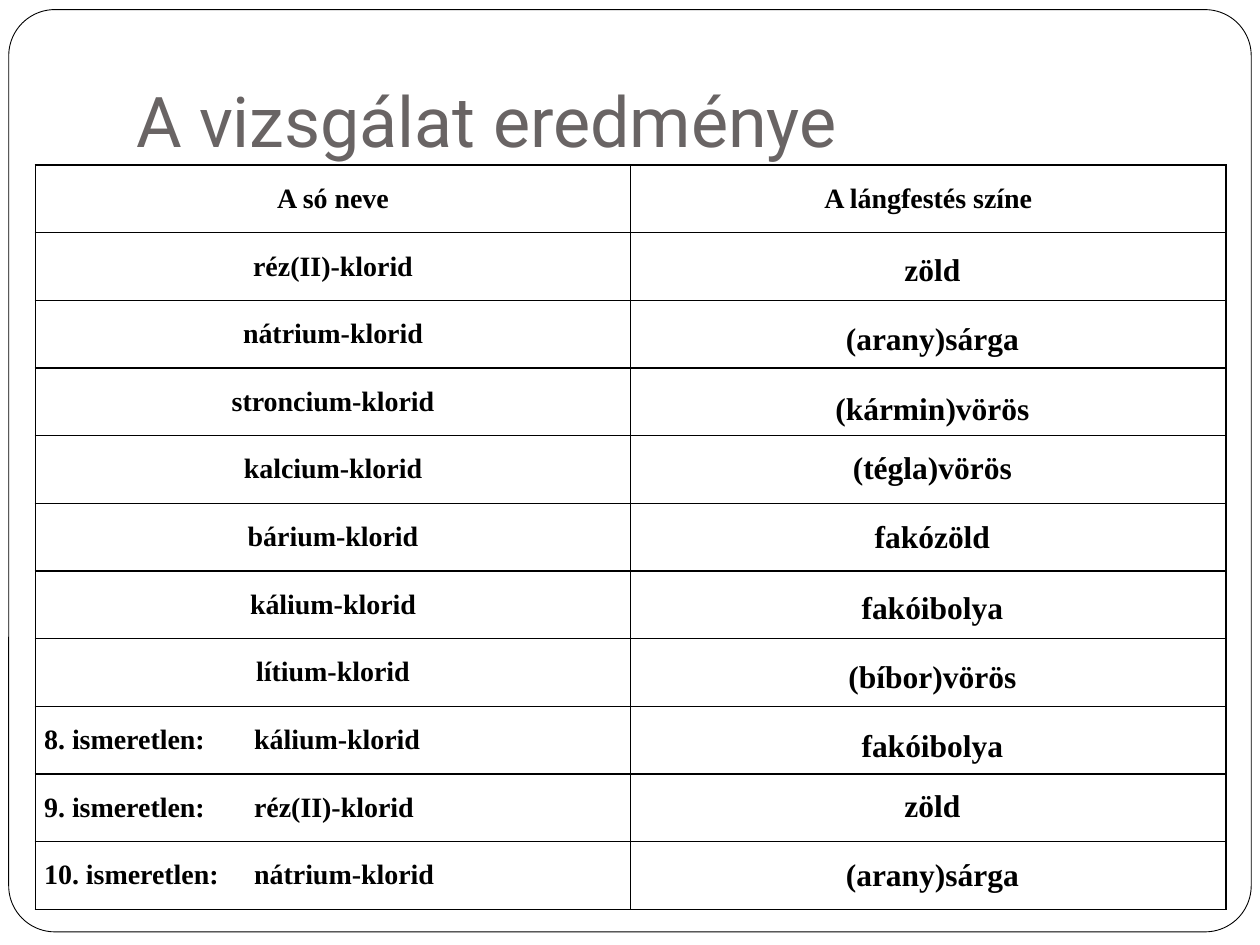
import dataclasses
import typing

import lxml.etree
import pptx
import pptx.dml.color
import pptx.enum.shapes
import pptx.enum.text
import pptx.oxml.ns
import pptx.util

Pt = pptx.util.Pt
Rgb = pptx.dml.color.RGBColor
Align = pptx.enum.text.PP_ALIGN
Anchor = pptx.enum.text.MSO_ANCHOR
Form = pptx.enum.shapes.MSO_SHAPE
qn = pptx.oxml.ns.qn


@dataclasses.dataclass(frozen=True)
class Theme:
    ink: str = "000000"
    paper: str = "FFFFFF"
    grey: str = "696464"
    head: str = "Roboto"
    body: str = "Times New Roman"
    title: float = 40
    cell: float = 16
    label: float = 18


@dataclasses.dataclass(frozen=True)
class Label:
    text: str
    top: float
    width: float


THEME = Theme()
MID = 532.8  # shared centre of the colour labels
TAB = 120  # where the names of the unknown salts start
SHORT, LONG, HIGH = 118.8, 130.3, 28.1

HEADS = ["A só neve", "A lángfestés színe"]
SALTS = [
    "réz(II)-klorid", "nátrium-klorid", "stroncium-klorid", "kalcium-klorid",
    "bárium-klorid", "kálium-klorid", "lítium-klorid",
]
GUESS = [
    "8. ismeretlen:\tkálium-klorid",
    "9. ismeretlen:\tréz(II)-klorid",
    "10. ismeretlen:\tnátrium-klorid",
]
LABELS = [
    Label("zöld", 139.7, SHORT),
    Label("(arany)sárga", 179.3, SHORT),
    Label("(kármin)vörös", 218.9, LONG),
    Label("(tégla)vörös", 252.7, LONG),
    Label("fakózöld", 292.3, SHORT),
    Label("fakóibolya", 332.6, SHORT),
    Label("(bíbor)vörös", 372.2, LONG),
    Label("fakóibolya", 411.8, SHORT),
    Label("zöld", 445.7, SHORT),
    Label("(arany)sárga", 485.3, SHORT),
]


def put(item: typing.Any, **vals: typing.Any) -> None:
    """Set each named format value on the item."""
    for name, val in vals.items():
        setattr(item, name, val)


def write(frame: typing.Any, text: str, align: Align, face: str,
          size: float, tint: str, bold: bool) -> None:
    frame.text = text
    para = frame.paragraphs[0]
    para.alignment = align
    font = para.runs[0].font
    put(font, name=face, size=Pt(size), bold=bold)
    font.color.rgb = Rgb.from_string(tint)


def draw_box(slide: typing.Any, kind: Form, left: float, top: float,
             width: float, high: float, line: str, thick: float) -> typing.Any:
    box = slide.shapes.add_shape(kind, Pt(left), Pt(top), Pt(width), Pt(high))
    box.shadow.inherit = False
    box.fill.solid()
    box.fill.fore_color.rgb = Rgb.from_string(THEME.paper)
    box.line.color.rgb = Rgb.from_string(line)
    box.line.width = Pt(thick)
    return box


def draw_edge(cell: typing.Any) -> None:
    """Give the cell a thin line on all four sides."""
    props = cell._tc.get_or_add_tcPr()
    for side in ("lnL", "lnR", "lnT", "lnB"):
        line = lxml.etree.SubElement(props, qn(f"a:{side}"), w=str(Pt(1)))
        fill = lxml.etree.SubElement(line, qn("a:solidFill"))
        lxml.etree.SubElement(fill, qn("a:srgbClr"), val=THEME.ink)


def add_tab(para: typing.Any) -> None:
    props = para._p.get_or_add_pPr()
    tabs = lxml.etree.SubElement(props, qn("a:tabLst"))
    lxml.etree.SubElement(tabs, qn("a:tab"), pos=str(Pt(TAB)), algn="l")


def draw_table(slide: typing.Any) -> None:
    rows = [HEADS] + [[name, ""] for name in SALTS + GUESS]
    grid = slide.shapes.add_table(len(rows), 2, Pt(20.2), Pt(94.3),
                                  Pt(680.4), Pt(425.5)).table
    put(grid, first_row=False, horz_banding=False)
    for row, texts in enumerate(rows):
        for col, text in enumerate(texts):
            cell = grid.cell(row, col)
            put(cell, margin_left=Pt(5), margin_right=Pt(5), margin_top=0,
                margin_bottom=0, vertical_anchor=Anchor.MIDDLE)
            draw_edge(cell)
            cell.fill.background()
            if text:
                align = Align.LEFT if text in GUESS else Align.CENTER
                write(cell.text_frame, text, align, THEME.body, THEME.cell,
                      THEME.ink, True)
            if text in GUESS:
                add_tab(cell.text_frame.paragraphs[0])


def draw_label(slide: typing.Any, label: Label) -> None:
    box = draw_box(slide, Form.RECTANGLE, MID - label.width / 2, label.top,
                   label.width, HIGH, THEME.paper, 1)
    put(box.text_frame, vertical_anchor=Anchor.MIDDLE, word_wrap=True)
    write(box.text_frame, label.text, Align.CENTER, THEME.body, THEME.label,
          THEME.ink, True)


def main() -> None:
    deck = pptx.Presentation()
    put(deck, slide_width=Pt(720), slide_height=Pt(540))
    slide = deck.slides.add_slide(deck.slide_layouts[5])

    # Rounded frame, with the title in front of it
    frame = draw_box(slide, Form.ROUNDED_RECTANGLE, 5, 5.5, 710, 527,
                     THEME.ink, 0.5)
    frame.adjustments[0] = 0.05
    title = slide.shapes.title
    frame.element.addnext(title.element)
    put(title, left=Pt(70.6), top=Pt(9.4), width=Pt(612), height=Pt(90))
    put(title.text_frame, vertical_anchor=Anchor.BOTTOM, word_wrap=True,
        auto_size=pptx.enum.text.MSO_AUTO_SIZE.NONE, margin_left=Pt(7.2),
        margin_right=Pt(7.2), margin_top=Pt(3.6), margin_bottom=Pt(7.2))
    write(title.text_frame, "A vizsgálat eredménye", Align.LEFT, THEME.head,
          THEME.title, THEME.grey, False)

    # Salts, and the flame colours laid over the second column
    draw_table(slide)
    for label in LABELS:
        draw_label(slide, label)

    deck.save("out.pptx")


if __name__ == "__main__":
    main()
